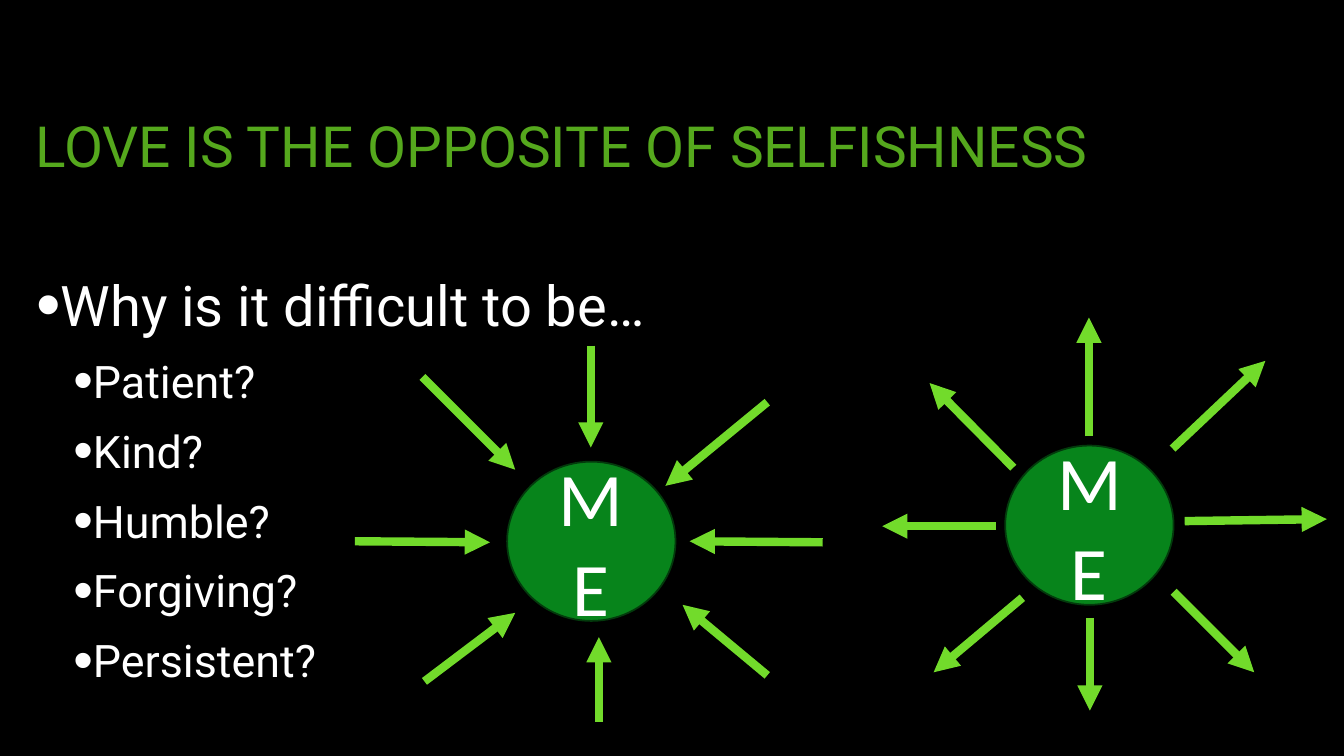
from dataclasses import dataclass

from lxml.etree import SubElement
from pptx import Presentation
from pptx.dml.color import RGBColor
from pptx.enum.shapes import MSO_CONNECTOR, MSO_SHAPE
from pptx.enum.text import MSO_ANCHOR, MSO_AUTO_SIZE, PP_ALIGN
from pptx.oxml.ns import qn
from pptx.util import Inches, Pt


@dataclass(frozen=True)
class Theme:
    background: str = "000000"
    title: str = "55A81D"
    text: str = "FFFFFF"
    circle: str = "07841B"
    outline: str = "033A0C"
    arrow: str = "72DB2B"
    text_font: str = "Roboto"
    circle_font: str = "Calibri"
    title_size: float = 40.5
    question_size: float = 40
    answer_size: float = 32
    circle_size: float = 54
    outline_width: float = 1.25
    arrow_width: float = 6


THEME = Theme()

ANSWERS = ["Patient?", "Kind?", "Humble?", "Forgiving?", "Persistent?"]

INWARD_ARROWS = [
    (4.19, 3.74, 5.11, 4.66),
    (3.52, 5.37, 4.86, 5.38),
    (5.94, 7.16, 5.94, 6.32),
    (4.21, 6.76, 5.11, 6.08),
    (7.61, 3.99, 6.6, 4.82),
    (5.86, 3.43, 5.86, 4.44),
    (7.61, 6.7, 6.77, 6),
    (8.16, 5.38, 6.84, 5.37),
]

OUTWARD_ARROWS = [
    (10.05, 4.64, 9.22, 3.8),
    (9.88, 5.22, 8.75, 5.22),
    (10.81, 6.13, 10.81, 7.05),
    (10.14, 5.93, 9.26, 6.67),
    (11.63, 4.45, 12.55, 3.58),
    (10.8, 4.33, 10.8, 3.15),
    (11.64, 5.87, 12.44, 6.67),
    (11.75, 5.17, 13.16, 5.15),
]


def color(value):
    return RGBColor.from_string(value)


def write_text(paragraph, text, *, size, font=THEME.text_font, fill=THEME.text,
               align=PP_ALIGN.LEFT, line_spacing=1.0, space_before=0):
    paragraph.alignment = align
    paragraph.line_spacing = line_spacing
    paragraph.space_before = Pt(space_before)
    run = paragraph.add_run()
    run.text = text
    run.font.name = font
    run.font.size = Pt(size)
    run.font.color.rgb = color(fill)


def add_bullet(paragraph, indent):
    properties = paragraph._p.get_or_add_pPr()
    properties.set("marL", str(Inches(indent)))
    properties.set("indent", str(Inches(-0.19)))
    SubElement(properties, qn("a:buSzPct"), val="125000")
    SubElement(properties, qn("a:buFont"), typeface="Arial")
    SubElement(properties, qn("a:buChar"), char="•")


def set_title(slide, text):
    title = slide.shapes.title
    title.left, title.top = Inches(0.25), Inches(0.67)
    title.width, title.height = Inches(12.9), Inches(1.62)
    frame = title.text_frame
    frame.auto_size = MSO_AUTO_SIZE.NONE
    frame.word_wrap = True
    frame.vertical_anchor = MSO_ANCHOR.MIDDLE
    write_text(frame.paragraphs[0], text, size=THEME.title_size,
               fill=THEME.title, line_spacing=0.9)


def add_question(slide, question, answers):
    box = slide.shapes.add_textbox(Inches(0.26), Inches(2.5), Inches(12.9), Inches(4.88))
    frame = box.text_frame
    frame.word_wrap = True
    paragraph = frame.paragraphs[0]
    add_bullet(paragraph, 0.19)
    write_text(paragraph, question, size=THEME.question_size, line_spacing=1.2)
    for answer in answers:
        paragraph = frame.add_paragraph()
        paragraph.level = 1
        add_bullet(paragraph, 0.56)
        write_text(paragraph, answer, size=THEME.answer_size,
                   line_spacing=1.2, space_before=3.8)


def add_circle(slide, left, top):
    circle = slide.shapes.add_shape(MSO_SHAPE.OVAL, Inches(left), Inches(top),
                                    Inches(1.67), Inches(1.58))
    circle.shadow.inherit = False
    circle.fill.solid()
    circle.fill.fore_color.rgb = color(THEME.circle)
    circle.line.color.rgb = color(THEME.outline)
    circle.line.width = Pt(THEME.outline_width)
    frame = circle.text_frame
    frame.word_wrap = True
    frame.vertical_anchor = MSO_ANCHOR.MIDDLE
    write_text(frame.paragraphs[0], "ME", size=THEME.circle_size,
               font=THEME.circle_font, align=PP_ALIGN.CENTER)


def add_arrow(slide, ends):
    arrow = slide.shapes.add_connector(MSO_CONNECTOR.STRAIGHT, *map(Inches, ends))
    arrow.line.color.rgb = color(THEME.arrow)
    arrow.line.width = Pt(THEME.arrow_width)
    SubElement(arrow.line._get_or_add_ln(), qn("a:tailEnd"), type="triangle")
    SubElement(arrow._element.spPr, qn("a:effectLst"))


def add_person(slide, left, top, arrows):
    add_circle(slide, left, top)
    for ends in arrows:
        add_arrow(slide, ends)


def main():
    presentation = Presentation()
    presentation.slide_width = Inches(13.33)
    presentation.slide_height = Inches(7.5)
    slide = presentation.slides.add_slide(presentation.slide_layouts.get_by_name("Title Only"))
    slide.background.fill.solid()
    slide.background.fill.fore_color.rgb = color(THEME.background)
    set_title(slide, "LOVE IS THE OPPOSITE OF SELFISHNESS")
    add_question(slide, "Why is it difficult to be…", ANSWERS)
    add_person(slide, 5.03, 4.58, INWARD_ARROWS)
    add_person(slide, 9.97, 4.42, OUTWARD_ARROWS)
    presentation.save("out.pptx")


if __name__ == "__main__":
    main()
